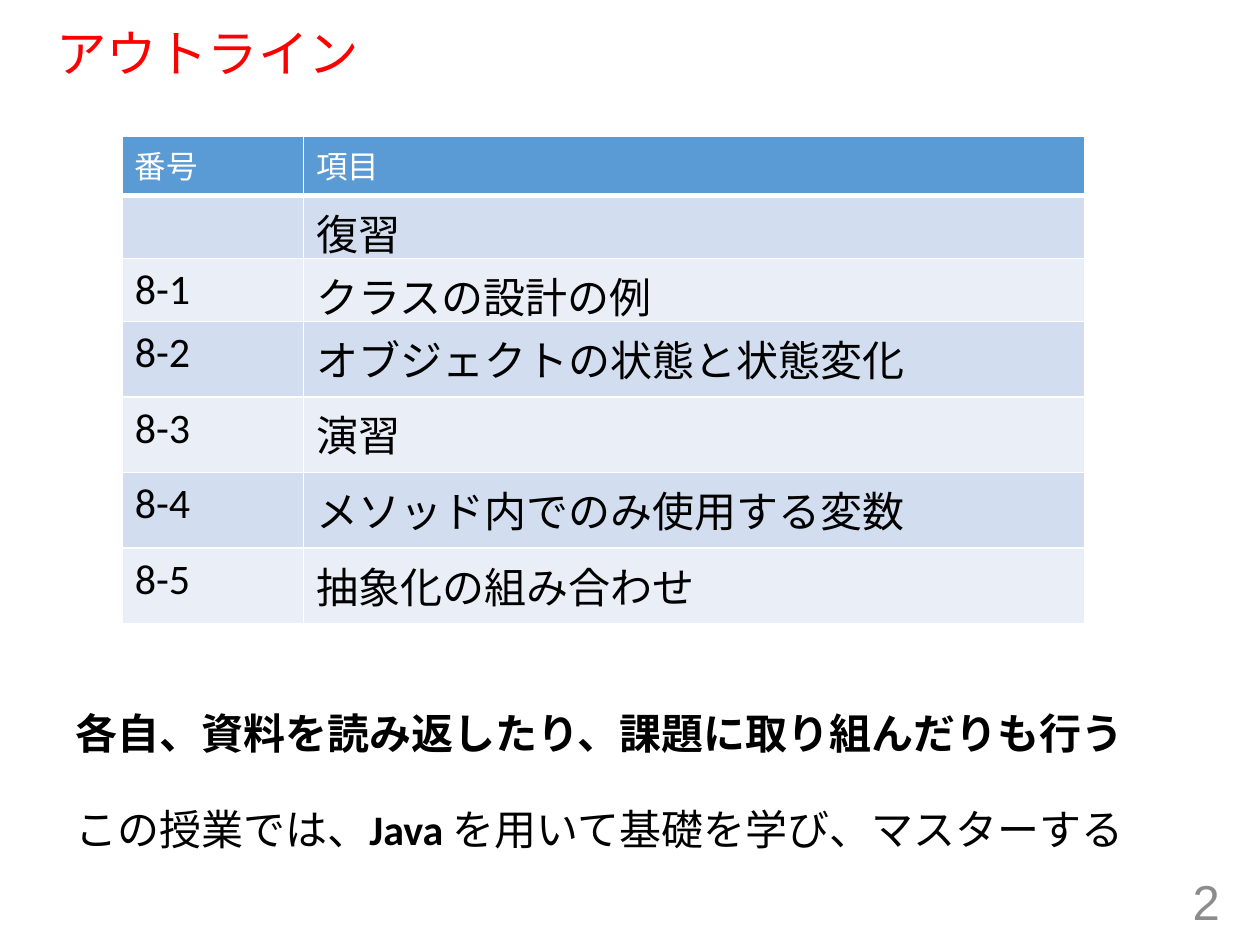
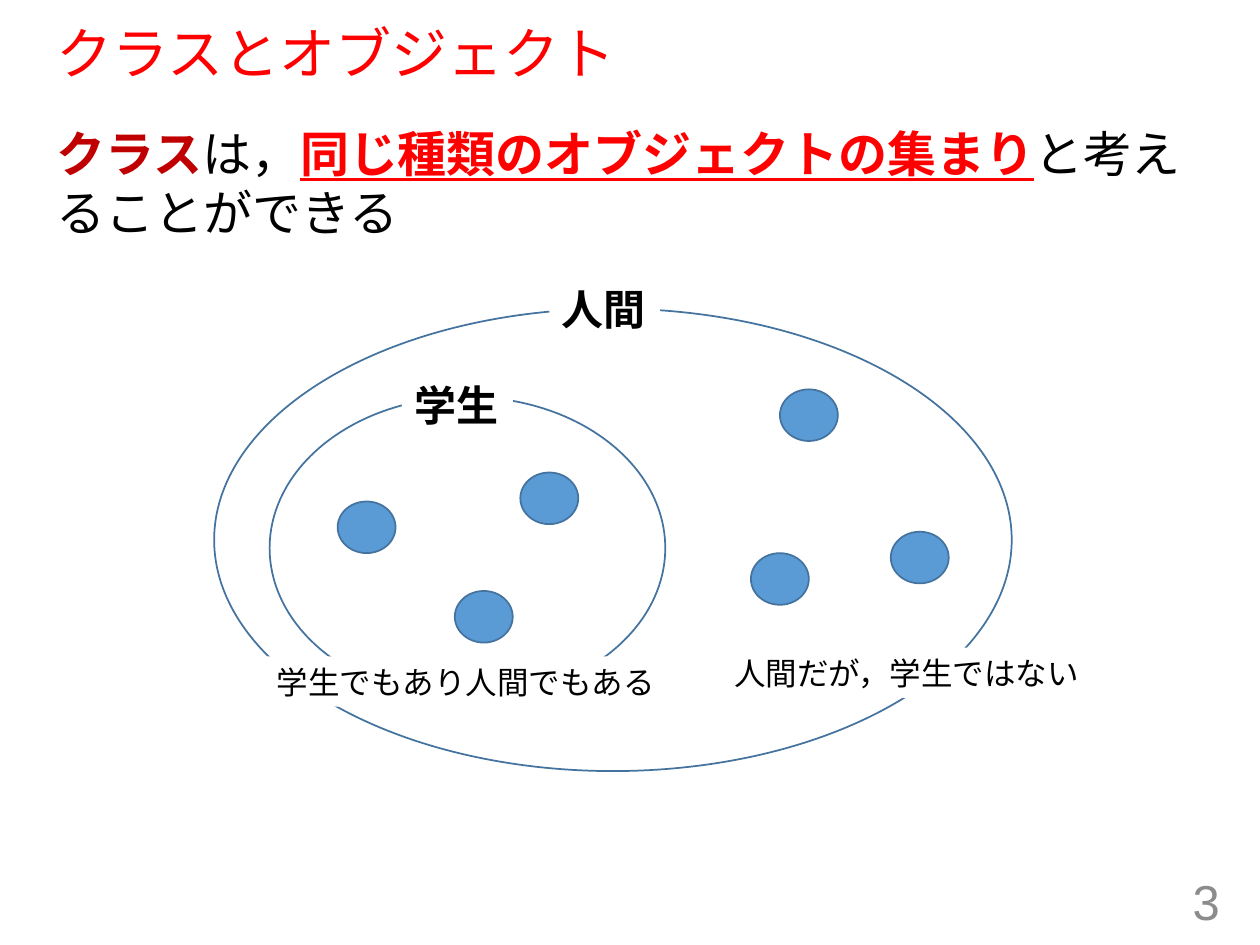
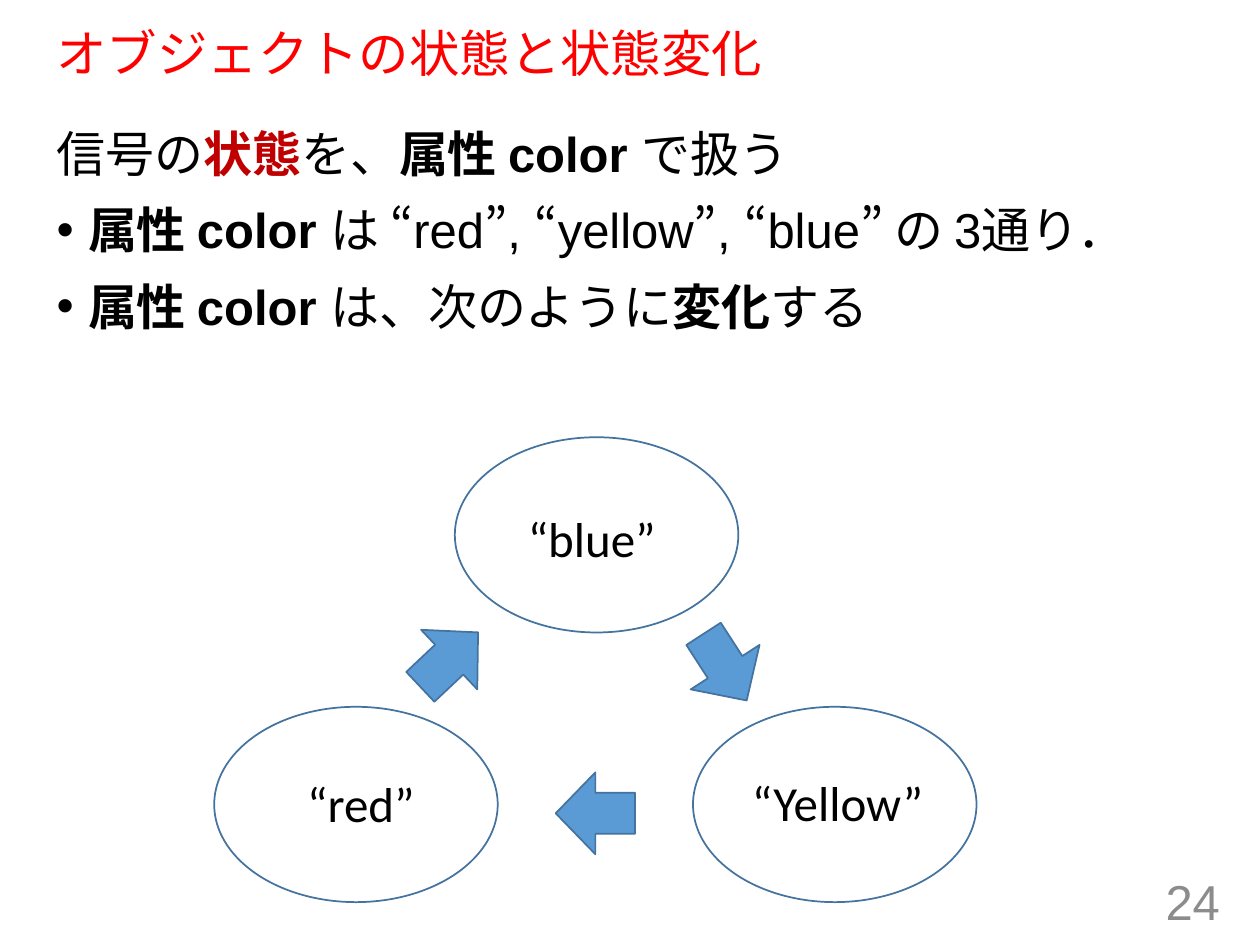
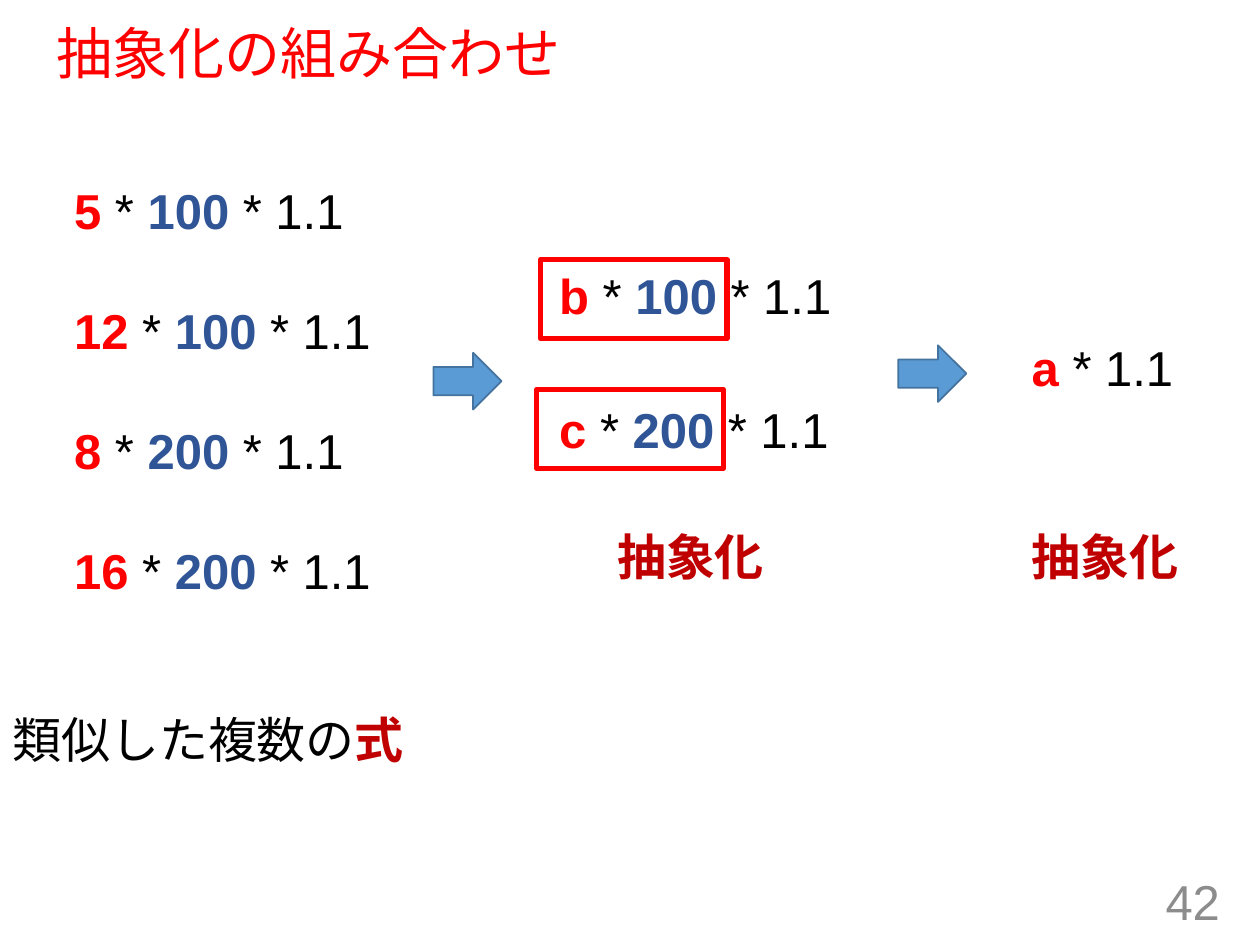
import pptx
import pptx.dml.color
import pptx.enum.lang
import pptx.enum.shapes
import pptx.enum.text
import pptx.oxml.ns
import pptx.util
from lxml import etree

SHAPES = pptx.enum.shapes.MSO_SHAPE
ALIGN = pptx.enum.text.PP_ALIGN
ANCHOR = pptx.enum.text.MSO_ANCHOR

BLACK, WHITE, RED, GRAY = "000000", "FFFFFF", "FF0000", "8C8C8C"
ACCENT, OUTLINE = "5B9BD5", "43739E"
BAND_DARK, BAND_LIGHT = "D2DEEF", "EAEFF7"

# Run styles: colour, bold, underlined
STYLES = {
    "plain": (BLACK, False, False),
    "bold": (BLACK, True, False),
    "title": (RED, False, False),
    "number": (GRAY, False, False),
    "header": (WHITE, False, False),
    "term": ("C00000", True, False),
    "variable": (RED, True, False),
    "factor": ("2F5597", True, False),
    "definition": (RED, True, True),
}


def color(value):
    return pptx.dml.color.RGBColor.from_string(value)


class Deck:
    """Holds the shared style and the current slide; places are (column, row, columns, rows)."""

    COLUMNS, ROWS = 100, 75

    def __init__(self):
        self.presentation = pptx.Presentation()
        self.presentation.slide_width = pptx.util.Inches(10)
        self.presentation.slide_height = pptx.util.Inches(7.5)
        self.slide = None

    def across(self, columns):
        return round(self.presentation.slide_width * columns / self.COLUMNS)

    def down(self, rows):
        return round(self.presentation.slide_height * rows / self.ROWS)

    def frame(self, place):
        left, top, width, height = place
        return self.across(left), self.down(top), self.across(width), self.down(height)

    def new_slide(self, title, number, title_size=32):
        layout = self.presentation.slide_layouts[6]
        self.slide = self.presentation.slides.add_slide(layout)
        heading = self.text((3.5, 1.9, 92.5, 5.1), [[(title, "title")]],
                            size=title_size, anchor=ANCHOR.MIDDLE)
        heading.text_frame.paragraphs[0].line_spacing = 0.9
        self.text((75.3, 69.5, 22.5, 4), [[(str(number), "number")]],
                  align=ALIGN.RIGHT, anchor=ANCHOR.MIDDLE)

    def add_runs(self, paragraph, runs, size, font):
        for text, style in runs:
            ink, bold, underline = STYLES[style]
            run = paragraph.add_run()
            run.text = text
            run.font.name = font
            run.font.size = pptx.util.Pt(size)
            run.font.bold = bold
            run.font.underline = underline
            run.font.color.rgb = color(ink)
            run.font.language_id = pptx.enum.lang.MSO_LANGUAGE_ID.JAPANESE

    def text(self, place, paragraphs, size=28, font="Arial", gap=0, bullets_from=None,
             align=ALIGN.LEFT, anchor=ANCHOR.TOP, fill=None):
        box = self.slide.shapes.add_textbox(*self.frame(place))
        if fill:
            box.fill.solid()
            box.fill.fore_color.rgb = color(fill)
        frame = box.text_frame
        frame.word_wrap = True
        frame.vertical_anchor = anchor
        for index, runs in enumerate(paragraphs):
            paragraph = frame.add_paragraph() if index else frame.paragraphs[0]
            if bullets_from is not None and index >= bullets_from:
                self.bullet(paragraph)
            paragraph.alignment = align
            if index and gap:
                paragraph.space_before = pptx.util.Pt(gap)
            self.add_runs(paragraph, runs, size, font)
        return box

    def bullet(self, paragraph):
        properties = paragraph._p.get_or_add_pPr()
        indent = self.across(2.5)
        properties.set("marL", str(indent))
        properties.set("indent", str(-indent))
        for tag, name, value in (("a:buFont", "typeface", "Arial"), ("a:buChar", "char", "•")):
            etree.SubElement(properties, pptx.oxml.ns.qn(tag)).set(name, value)

    def label(self, place, text, style="plain", size=24, fill=None):
        self.text(place, [[(text, style)]], size=size, font="Calibri", fill=fill)

    def shape(self, kind, place, fill=None, line=OUTLINE, width=1, rotation=0):
        shape = self.slide.shapes.add_shape(kind, *self.frame(place))
        shape.shadow.inherit = False
        shape.rotation = rotation
        if fill:
            shape.fill.solid()
            shape.fill.fore_color.rgb = color(fill)
        else:
            shape.fill.background()
        shape.line.color.rgb = color(line)
        shape.line.width = pptx.util.Pt(width)

    def table(self, place, widths, heights, rows):
        table = self.slide.shapes.add_table(len(rows), len(widths), *self.frame(place)).table
        for column, width in zip(table.columns, widths):
            column.width = self.across(width)
        for index, (row, height, texts) in enumerate(zip(table.rows, heights, rows)):
            row.height = self.down(height)
            style, size = ("plain", 24) if index else ("header", 18)
            band = (BAND_DARK if index % 2 else BAND_LIGHT) if index else ACCENT
            for cell, text in zip(row.cells, texts):
                self.borders(cell, bottom=1 if index else 3)
                cell.fill.solid()
                cell.fill.fore_color.rgb = color(band)
                if text:
                    self.add_runs(cell.text_frame.paragraphs[0], [(text, style)], size, "Calibri")

    def borders(self, cell, bottom):
        properties = cell._tc.get_or_add_tcPr()
        for side, width in (("L", 1), ("R", 1), ("T", 1), ("B", bottom)):
            line = etree.SubElement(properties, pptx.oxml.ns.qn("a:ln" + side))
            line.set("w", str(pptx.util.Pt(width)))
            solid = etree.SubElement(line, pptx.oxml.ns.qn("a:solidFill"))
            etree.SubElement(solid, pptx.oxml.ns.qn("a:srgbClr")).set("val", WHITE)


def expression(variable, factor=None):
    runs = [(variable, "variable")]
    if factor:
        runs += [(" * ", "plain"), (factor, "factor")]
    return runs + [(" * 1.1", "plain")]


def outline_slide(deck):
    deck.new_slide("アウトライン", 2, title_size=28.8)
    topics = ["クラスの設計の例", "オブジェクトの状態と状態変化", "演習",
              "メソッド内でのみ使用する変数", "抽象化の組み合わせ"]
    rows = [("番号", "項目"), ("", "復習")]
    rows += [(f"8-{index}", topic) for index, topic in enumerate(topics, 1)]
    deck.table((9.7, 10.8, 76.4, 38.7), [14.4, 62], [4.7] * 3 + [6] * 4, rows)
    deck.label((5, 55.7, 86.2, 5), "各自、資料を読み返したり、課題に取り組んだりも行う", "bold")
    deck.text((5, 63.3, 85.9, 5), [[("この授業では、", "plain"), ("Java ", "bold"),
                                    ("を用いて基礎を学び、マスターする", "plain")]],
              size=24, font="Calibri")


def class_slide(deck):
    deck.new_slide("クラスとオブジェクト", 3)
    deck.text((3.5, 9.3, 92.5, 58.3), [[
        ("クラス", "term"), ("は，", "plain"),
        ("同じ種類のオブジェクトの集まり", "definition"),
        ("と考えることができる", "plain")]])

    # Objects, then the sets around them
    students = [(26.8, 39.8), (36.1, 46.9), (41.3, 37.5)]
    others = [(61.9, 30.9), (70.7, 42.2), (59.6, 43.9)]
    for left, top in students + others:
        deck.shape(SHAPES.OVAL, (left, top, 4.6, 4.1), fill=ACCENT)
    for place in ((21.4, 31.5, 31.4, 24), (17, 24.5, 63.3, 36.7)):
        deck.shape(SHAPES.OVAL, place)

    # Labels that interrupt the outlines
    deck.label((43.6, 22, 8.8, 5), "人間", "bold", fill=WHITE)
    deck.label((31.9, 29.6, 8.8, 5), "学生", "bold", fill=WHITE)
    deck.label((21, 52.1, 32.3, 4), "学生でもあり人間でもある", size=18, fill=WHITE)
    deck.label((57.3, 51.4, 29.8, 4), "人間だが，学生ではない", size=18, fill=WHITE)


def state_slide(deck):
    deck.new_slide("オブジェクトの状態と状態変化", 24, title_size=28.8)
    attribute = ("属性 color ", "bold")
    deck.text((3.5, 9.3, 92.5, 20.5), [
        [("信号の", "plain"), ("状態", "term"), ("を、", "plain"), attribute, ("で扱う", "plain")],
        [attribute, ("は “red”, “yellow”, “blue” の 3通り．", "plain")],
        [attribute, ("は、次のように", "plain"), ("変化", "bold"), ("する", "plain")],
    ], gap=10, bullets_from=1)

    # States and the arrows of the cycle
    for left, top in ((36.1, 34.7), (55, 56.1), (17, 56.1)):
        deck.shape(SHAPES.FLOWCHART_CONNECTOR, (left, top, 22.5, 15.5))
    for left, top, rotation in ((54.3, 49.8, 327.1), (44, 61.4, 90), (32.4, 49.2, 226.7)):
        deck.shape(SHAPES.DOWN_ARROW, (left, top, 6.5, 6.3), fill=ACCENT, rotation=rotation)
    deck.label((40.9, 39.9, 12.2, 5.7), "“blue”", size=28)
    deck.label((58.7, 60.8, 15.7, 5.7), "“Yellow”", size=28)
    deck.label((23.4, 60.9, 10.6, 5.7), "“red”", size=28)


def abstraction_slide(deck):
    deck.new_slide("抽象化の組み合わせ", 42)
    deck.text((0, 55.8, 33.4, 5.7), [[("類似した複数の", "plain"), ("式", "term")]])

    # Expressions, from concrete to abstract
    concrete = [("5", "100"), ("12", "100"), ("8", "200"), ("16", "200")]
    deck.text((4.9, 13.8, 25.8, 25.3), [expression(*pair) for pair in concrete], gap=35)
    deck.text((43.4, 20.6, 23.7, 5.7), [expression("b", "100")])
    deck.text((43.4, 31.2, 23.7, 5.7), [expression("c", "200")])
    deck.text((80.9, 26.3, 23.7, 5.7), [expression("a")])

    for left in (48, 80.9):
        deck.text((left, 41.3, 19, 5.7), [[("抽象化", "term")]])
    for left, top in ((34.4, 28), (71.3, 27.4)):
        deck.shape(SHAPES.RIGHT_ARROW, (left, top, 5.4, 4.5), fill=ACCENT)
    for left, top in ((42.9, 20.6), (42.6, 30.9)):
        deck.shape(SHAPES.RECTANGLE, (left, top, 14.8, 6.3), line=RED, width=3)


def main():
    deck = Deck()
    for build in (outline_slide, class_slide, state_slide, abstraction_slide):
        build(deck)
    deck.presentation.save("out.pptx")


if __name__ == "__main__":
    main()
